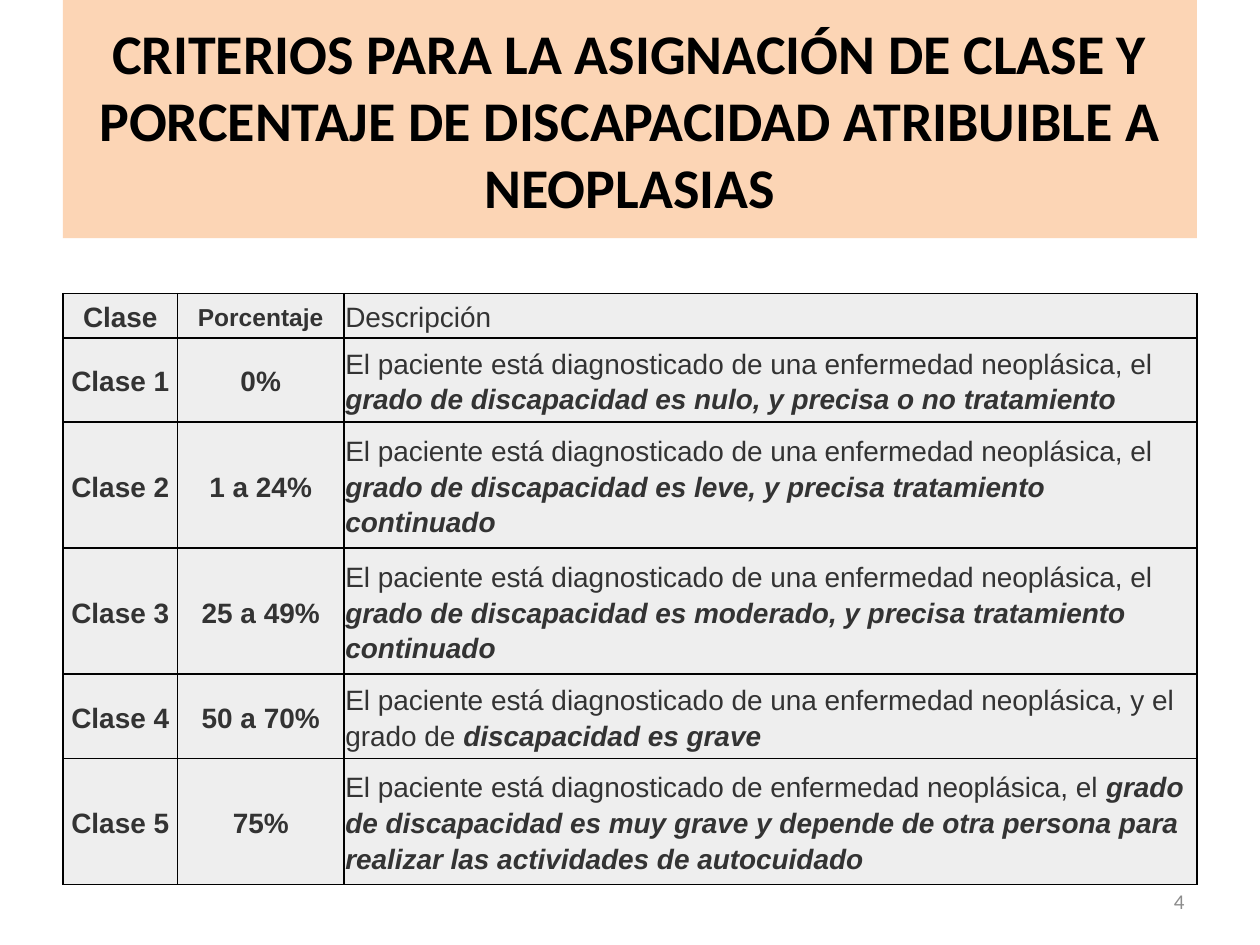
from dataclasses import dataclass

from lxml import etree
from pptx import Presentation
from pptx.dml.color import RGBColor
from pptx.enum.shapes import MSO_SHAPE
from pptx.enum.text import MSO_ANCHOR, PP_ALIGN
from pptx.oxml.ns import qn
from pptx.util import Cm, Pt

LEFT, MID, RIGHT = PP_ALIGN.LEFT, PP_ALIGN.CENTER, PP_ALIGN.RIGHT
MIDDLE = MSO_ANCHOR.MIDDLE
RECT = MSO_SHAPE.RECTANGLE

COLORS = {
    "peach": "FCD5B5",
    "black": "000000",
    "ink": "333333",
    "cell": "EEEEEE",
    "gray": "8C8C8C",
}
SIDE = Cm(1.27)
WIDTH = Cm(22.86)
COLS = [Cm(2.31), Cm(3.35), Cm(17.2)]
HEAD_ROW = Cm(0.89)
ROWS = {2: Cm(1.7), 3: Cm(2.54)}  # height by number of text lines
PAD = Cm(0.03)
BASE = "El paciente está diagnosticado de una enfermedad neoplásica, "


@dataclass
class Grade:
    name: str
    share: str
    plain: str
    strong: str
    lines: int


GRADES = [
    Grade("Clase 1", "0%", BASE + "el ",
          "grado de discapacidad es nulo, y precisa o no tratamiento", 2),
    Grade("Clase 2", "1 a 24%", BASE + "el ",
          "grado de discapacidad es leve, y precisa tratamiento continuado", 3),
    Grade("Clase 3", "25 a 49%", BASE + "el ",
          "grado de discapacidad es moderado, y precisa tratamiento continuado", 3),
    Grade("Clase 4", "50 a 70%", BASE + "y el grado de ",
          "discapacidad es grave", 2),
    Grade("Clase 5", "75%",
          "El paciente está diagnosticado de enfermedad neoplásica, el ",
          "grado de discapacidad es muy grave y depende de otra persona "
          "para realizar las actividades de autocuidado", 3),
]


def color(key: str) -> RGBColor:
    return RGBColor.from_string(COLORS[key])


def style(para, face: str, size: int, key: str, align, bold: bool = False) -> None:
    para.alignment = align
    font = para.font
    font.name, font.size, font.bold = face, Pt(size), bold
    font.color.rgb = color(key)


def border(cell) -> None:
    props = cell._tc.get_or_add_tcPr()
    for side in ("a:lnL", "a:lnR", "a:lnT", "a:lnB"):
        line = etree.SubElement(props, qn(side), w=str(Pt(1)))
        fill = etree.SubElement(line, qn("a:solidFill"))
        etree.SubElement(fill, qn("a:srgbClr"), val=COLORS["black"])


def write(cell, text: str, align=MID, size: int = 16, bold: bool = True,
          strong: str = "") -> None:
    border(cell)
    cell.fill.solid()
    cell.fill.fore_color.rgb = color("cell")
    cell.vertical_anchor = MIDDLE
    cell.margin_left = cell.margin_right = PAD
    cell.margin_top = cell.margin_bottom = PAD
    para = cell.text_frame.paragraphs[0]
    para.line_spacing = 1.15
    style(para, "Arial", size, "ink", align, bold)
    para.add_run().text = text
    if strong:
        run = para.add_run()
        run.text = strong
        run.font.bold = run.font.italic = True


def add_title(slide) -> None:
    box = slide.shapes.add_shape(RECT, SIDE, 0, WIDTH, Cm(4.8))
    box.shadow.inherit = False
    box.fill.solid()
    box.fill.fore_color.rgb = color("peach")
    box.line.fill.background()
    frame = box.text_frame
    frame.word_wrap = True
    frame.vertical_anchor = MIDDLE
    frame.text = ("CRITERIOS PARA LA ASIGNACIÓN DE CLASE Y PORCENTAJE "
                  "DE DISCAPACIDAD ATRIBUIBLE A NEOPLASIAS")
    style(frame.paragraphs[0], "Calibri", 32, "black", MID, True)


def add_grades(slide) -> None:
    highs = [HEAD_ROW] + [ROWS[grade.lines] for grade in GRADES]
    table = slide.shapes.add_table(len(highs), len(COLS), SIDE, Cm(5.92),
                                   WIDTH, sum(highs)).table
    for col, width in zip(table.columns, COLS):
        col.width = width
    for row, high in zip(table.rows, highs):
        row.height = high

    # Header row
    write(table.cell(0, 0), "Clase")
    write(table.cell(0, 1), "Porcentaje", size=14)
    write(table.cell(0, 2), "Descripción", LEFT, bold=False)

    # One row per class
    for i, grade in enumerate(GRADES, 1):
        write(table.cell(i, 0), grade.name)
        write(table.cell(i, 1), grade.share)
        write(table.cell(i, 2), grade.plain, LEFT, bold=False,
              strong=grade.strong)


def add_number(slide) -> None:
    box = slide.shapes.add_textbox(Cm(18.2), Cm(17.65), Cm(5.93), Cm(1.02))
    frame = box.text_frame
    frame.word_wrap = True
    frame.vertical_anchor = MIDDLE
    frame.text = "4"
    style(frame.paragraphs[0], "Calibri", 12, "gray", RIGHT)


def main() -> None:
    deck = Presentation()
    deck.slide_width, deck.slide_height = Cm(25.4), Cm(19.05)
    slide = deck.slides.add_slide(deck.slide_layouts[6])
    add_number(slide)
    add_title(slide)
    add_grades(slide)
    deck.save("out.pptx")


if __name__ == "__main__":
    main()
